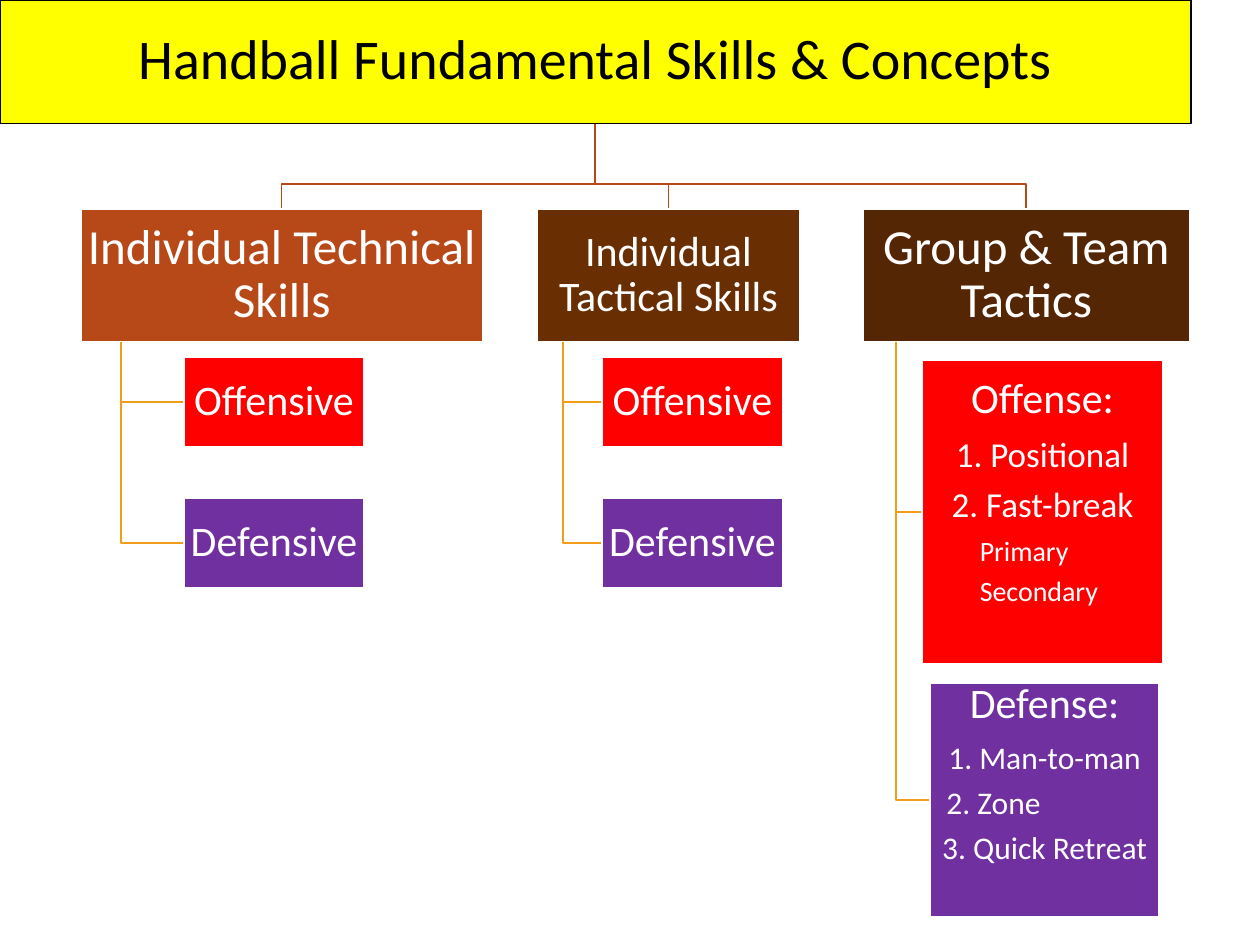
from dataclasses import dataclass, field

from pptx import Presentation
from pptx.dml.color import RGBColor
from pptx.enum.shapes import MSO_SHAPE
from pptx.enum.text import MSO_ANCHOR, PP_ALIGN
from pptx.util import Pt

WHITE, BLACK, YELLOW = "FFFFFF", "000000", "FFFF00"
RED, PURPLE, ORANGE, RUST = "FF0000", "7030A0", "F19D19", "B74919"
INSET = 1.4
BRANCH_Y = 105.1


@dataclass
class Line:
    text: str
    size: float
    indent: float = 0


@dataclass
class Box:
    left: float
    top: float
    width: float
    height: float
    fill: str
    lines: list[Line]
    bottom: float = INSET
    children: list["Box"] = field(default_factory=list)

    @property
    def center(self) -> float:
        return self.left + self.width / 2

    @property
    def middle(self) -> float:
        return self.top + self.height / 2

    @property
    def base(self) -> float:
        return self.top + self.height


def rgb(color: str) -> RGBColor:
    return RGBColor.from_string(color)


def format_box(sp, box: Box, line_color: str, text_color: str) -> None:
    sp.left, sp.top = Pt(box.left), Pt(box.top)
    sp.width, sp.height = Pt(box.width), Pt(box.height)
    sp.fill.solid()
    sp.fill.fore_color.rgb = rgb(box.fill)
    sp.line.color.rgb = rgb(line_color)
    sp.line.width = Pt(1)
    tf = sp.text_frame
    tf.word_wrap = True
    tf.vertical_anchor = MSO_ANCHOR.MIDDLE
    tf.margin_left = tf.margin_right = tf.margin_top = Pt(INSET)
    tf.margin_bottom = Pt(box.bottom)
    tf.text = "\n".join(line.text for line in box.lines)
    for p, line in zip(tf.paragraphs, box.lines):
        p.alignment = PP_ALIGN.LEFT if line.indent else PP_ALIGN.CENTER
        if line.indent:
            p._p.get_or_add_pPr().set("marL", str(Pt(line.indent)))
        p.line_spacing = 0.9
        p.space_before = Pt(0)
        p.space_after = Pt(0.35 * line.size)
        for r in p.runs:
            r.font.name = "Calibri"
            r.font.size = Pt(line.size)
            r.font.color.rgb = rgb(text_color)


def draw_box(s, box: Box) -> None:
    sp = s.shapes.add_shape(MSO_SHAPE.RECTANGLE, 0, 0, Pt(1), Pt(1))
    sp.shadow.inherit = False
    format_box(sp, box, WHITE, WHITE)
    for child in box.children:
        draw_box(s, child)


def draw_path(s, points: list[tuple[float, float]], color: str) -> None:
    start, *rest = [(Pt(x), Pt(y)) for x, y in points]
    builder = s.shapes.build_freeform(*start)
    builder.add_line_segments(rest, close=False)
    sp = builder.convert_to_shape()
    sp.shadow.inherit = False
    sp.fill.background()
    sp.line.color.rgb = rgb(color)
    sp.line.width = Pt(1)


def draw_links(s, root: Box) -> None:
    for group in root.children:
        draw_path(s, [(root.center, root.base), (root.center, BRANCH_Y),
                      (group.center, BRANCH_Y), (group.center, group.top)], RUST)
        trunk = group.left + group.width / 10
        for child in group.children:
            draw_path(s, [(trunk, group.base), (trunk, child.middle),
                          (child.left, child.middle)], ORANGE)


def group_box(left: float, width: float, fill: str, text: str, size: float,
              children: list[Box]) -> Box:
    return Box(left, 119.5, width, 75.6, fill, [Line(text, size)], children=children)


def skill_pair(left: float) -> list[Box]:
    skills = [("Offensive", RED), ("Defensive", PURPLE)]
    return [Box(left, 203.9 + 80.5 * i, 103, 51.5, fill, [Line(text, 24)])
            for i, (text, fill) in enumerate(skills)]


def build_chart() -> Box:
    offense = Box(527, 206, 137.5, 173.5, RED, [
        Line("Offense:", 24),
        Line("1. Positional", 20),
        Line("2. Fast-break", 20),
        Line("Primary", 16, 31.5),
        Line("Secondary", 16, 31.5),
    ], bottom=24.6)
    defense = Box(531.4, 390.2, 131, 133.9, PURPLE, [
        Line("Defense:", 24),
        Line("1. Man-to-man", 18),
        Line("2. Zone", 18, 8),
        Line("3. Quick Retreat", 18),
    ], bottom=30.4)
    return Box(0, 0, 680.4, 70.6, YELLOW,
               [Line("Handball Fundamental Skills & Concepts", 32)], children=[
        group_box(46.1, 229.7, RUST, "Individual Technical Skills", 28, skill_pair(105.1)),
        group_box(306.7, 150.5, "692F03", "Individual Tactical Skills", 24, skill_pair(344.2)),
        group_box(493.2, 186.5, "552603", "Group & Team Tactics", 28, [offense, defense]),
    ])


def main() -> None:
    prs = Presentation()
    prs.slide_width, prs.slide_height = Pt(720), Pt(540)
    s = prs.slides.add_slide(prs.slide_layouts[5])
    root = build_chart()
    draw_links(s, root)
    format_box(s.shapes.title, root, BLACK, BLACK)
    for group in root.children:
        draw_box(s, group)
    prs.save("out.pptx")


if __name__ == "__main__":
    main()
